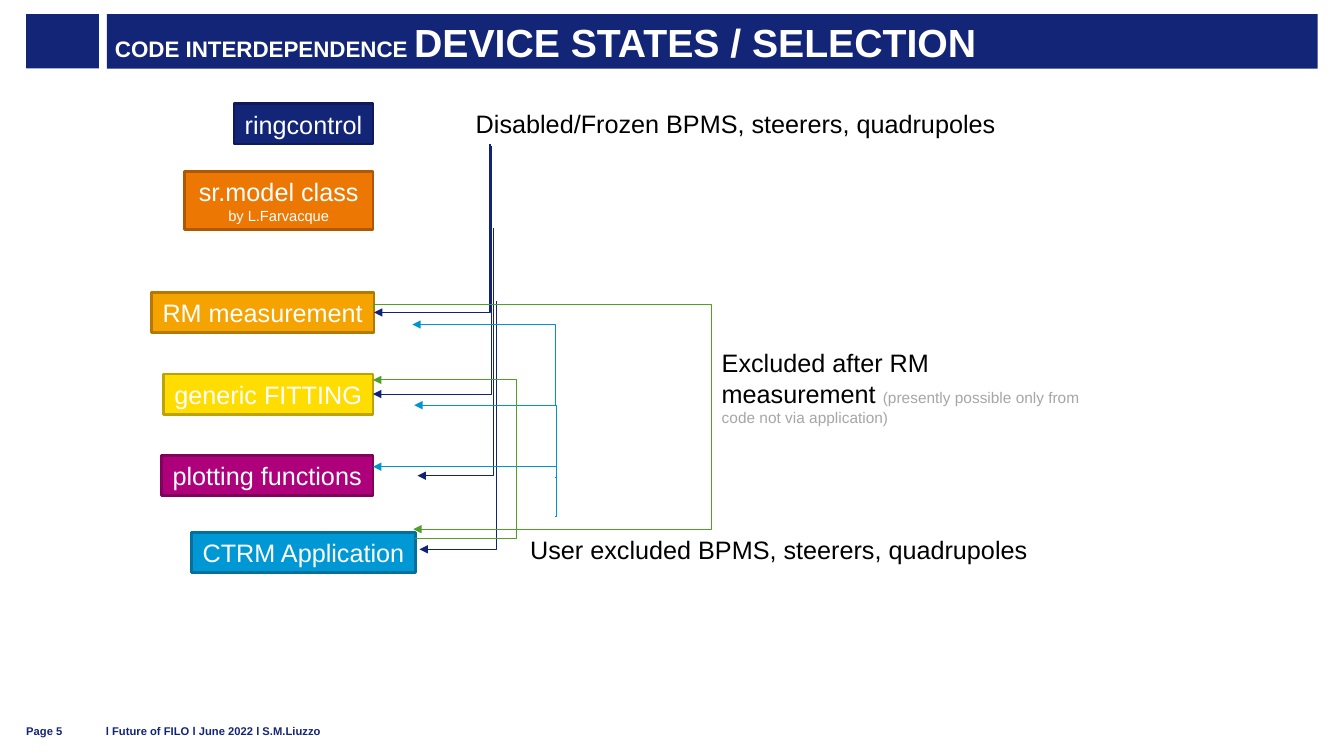
import pptx
import pptx.dml.color
import pptx.enum.shapes
import pptx.enum.text
import pptx.oxml
import pptx.oxml.ns
import pptx.util

Inches = pptx.util.Inches
NAVY, BLUE, GREEN, WHITE, BLACK = "132577", "0095CF", "51A026", "FFFFFF", "000000"
ARROW_NAVY = "102377"
MODULES = [
    ([("ringcontrol", 18)], 2.2, 0, 1.38, 0.4, NAVY, "0E1B58"),
    ([("sr.model class", 18), ("by L.Farvacque", 10.5)], 2.2, 0.67, 1.87, 0.58, "ED7703", "AF5802"),
    ([("RM measurement", 18)], 2.21, 1.87, 2.21, 0.4, "F4A300", "B57900"),
    ([("generic FITTING", 18)], 2.2, 2.68, 2.08, 0.4, "FFDD00", "BDA300"),
    ([("plotting functions", 18)], 2.2, 3.49, 2.1, 0.4, "AF007C", "81005C"),
    ([("CTRM Application", 18)], 2.62, 4.25, 2.22, 0.4, BLUE_FILL := "0098D4", "00709D"),
]
NOTES = [
    ((3.12, 0, 5.55, 0.4), [("Disabled/Frozen BPMS, steerers, quadrupoles", 18, BLACK)]),
    ((3.66, 4.22, 5.18, 0.4), [("User excluded BPMS, steerers, quadrupoles", 18, BLACK)]),
    ((5.56, 2.37, 3.85, 0.59), [
        ("Excluded after RM measurement ", 18, BLACK),
        ("(presently possible only from code not via application)", 11, "A6A6A6")]),
]
DROPS = [
    ((3.36, 0.4), (2.21, 2.07)),
    ((3.37, 0.42), (2.2, 2.88)),
    ((3.39, 1.23), (2.64, 3.69)),
    ((3.42, 1.96), (2.66, 4.42)),
]
LOOPS = [
    ((4.01, 4.09), (2.2, 3.6), 4.02, BLUE),
    ((4.01, 3.71), (2.61, 2.99), 4.02, BLUE),
    ((4.01, 2.99), (2.59, 2.19), 4.01, BLUE),
    ((2.62, 4.31), (2.2, 2.74), 3.62, GREEN),
]


def color(value):
    """Return the colour for a hex string."""
    return pptx.dml.color.RGBColor.from_string(value)


def add_span(para, text, size, tint, bold=False):
    """Add one formatted run to a paragraph."""
    span = para.add_run()
    span.text = text
    span.font.name = "Arial"
    span.font.size = pptx.util.Pt(size)
    span.font.bold = bold
    span.font.color.rgb = color(tint)


def add_rectangle(page, box, fill):
    """Add a flat filled rectangle without an outline."""
    shape = page.shapes.add_shape(pptx.enum.shapes.MSO_SHAPE.RECTANGLE, *map(Inches, box))
    shape.shadow.inherit = False
    shape.fill.solid()
    shape.fill.fore_color.rgb = color(fill)
    shape.line.fill.background()
    return shape


def add_text(page, box, spans):
    """Add a wrapping text box with one paragraph."""
    frame = page.shapes.add_textbox(*map(Inches, box)).text_frame
    frame.word_wrap = True
    for span in spans:
        add_span(frame.paragraphs[0], *span)
    return frame


def add_header(page, box):
    """Place the square and the title bar across the box."""
    left, top, width, height = box
    add_rectangle(page, (left, top, 0.72, height), NAVY)
    title = page.shapes.title
    title.left, title.top = Inches(left + 0.8), Inches(top)
    title.width, title.height = Inches(width - 0.8), Inches(height)
    title.fill.solid()
    title.fill.fore_color.rgb = color(NAVY)
    frame = title.text_frame
    frame.auto_size = pptx.enum.text.MSO_AUTO_SIZE.NONE
    frame.vertical_anchor = pptx.enum.text.MSO_ANCHOR.MIDDLE
    frame.margin_left = frame.margin_right = Inches(0.08)
    frame.margin_top = frame.margin_bottom = 0
    para = frame.paragraphs[0]
    para.alignment = pptx.enum.text.PP_ALIGN.LEFT
    add_span(para, "CODE INTERDEPENDENCE ", 16, WHITE, True)
    add_span(para, "DEVICE STATES / SELECTION", 28, WHITE, True)


def add_footer(page, box):
    """Place the page number and the talk details in the box."""
    left, top, width, height = box
    parts = [(0, 0.6, "Page 5"), (0.79, width - 0.79, "l Future of FILO l June 2022 l S.M.Liuzzo")]
    for offset, part_width, text in parts:
        frame = add_text(page, (left + offset, top, part_width, height), [(text, 8, NAVY, True)])
        frame.vertical_anchor = pptx.enum.text.MSO_ANCHOR.BOTTOM
        frame.margin_left = frame.margin_right = frame.margin_top = frame.margin_bottom = 0


def add_module(page, box, lines, fill, border):
    """Add one outlined code module with centred lines."""
    shape = add_rectangle(page, box, fill)
    shape.line.color.rgb = color(border)
    shape.line.width = pptx.util.Pt(2)
    frame = shape.text_frame
    frame.word_wrap = False
    for index, (text, size) in enumerate(lines):
        para = frame.add_paragraph() if index else frame.paragraphs[0]
        para.alignment = pptx.enum.text.PP_ALIGN.CENTER
        add_span(para, text, size, WHITE)


def add_elbow(page, begin, end, tint, preset, adjustments=(), turn=0):
    """Add a bent arrow, with its frame turned by the given degrees."""
    (x1, y1), (x2, y2) = begin, end
    if turn:
        middle_x, middle_y = (x1 + x2) / 2, (y1 + y2) / 2
        half_width, half_height = abs(y2 - y1) / 2, abs(x2 - x1) / 2
        side = 1 if turn == 90 else -1
        x1, x2 = middle_x - side * half_width, middle_x + side * half_width
        y1, y2 = middle_y - half_height, middle_y + half_height
    kind = pptx.enum.shapes.MSO_CONNECTOR.ELBOW
    arrow = page.shapes.add_connector(kind, *map(Inches, (x1, y1, x2, y2)))
    arrow.line.color.rgb = color(tint)
    arrow.line.width = pptx.util.Pt(0.75)
    qn, make = pptx.oxml.ns.qn, pptx.oxml.xmlchemy.OxmlElement
    properties = arrow.element.spPr
    if turn:
        properties.find(qn("a:xfrm")).set("rot", str(turn * 60000))
    geometry = properties.find(qn("a:prstGeom"))
    geometry.set("prst", preset)
    for number, value in enumerate(adjustments, 1):
        guide = make("a:gd")
        guide.set("name", f"adj{number}")
        guide.set("fmla", f"val {round(value * 100000)}")
        geometry.find(qn("a:avLst")).append(guide)
    tail = make("a:tailEnd")
    tail.set("type", "triangle")
    properties.find(qn("a:ln")).append(tail)
    properties.append(make("a:effectLst"))


def add_diagram(page, box):
    """Place modules, notes and arrows from the corner of the box."""
    left, top = box[:2]

    def place(point):
        """Shift a point by the corner of the box."""
        return left + point[0], top + point[1]

    for lines, right, offset, width, height, fill, border in MODULES:
        add_module(page, (*place((right - width, offset)), width, height), lines, fill, border)
    for note, spans in NOTES:
        add_text(page, (*place(note), *note[2:]), spans)
    for begin, end in DROPS:
        add_elbow(page, place(begin), place(end), ARROW_NAVY, "bentConnector2", turn=90)
    for begin, end, bend, tint in LOOPS:
        ratio = (begin[0] - bend) / (begin[0] - end[0])
        add_elbow(page, place(begin), place(end), tint, "bentConnector3", [ratio])
    begin, end, rise, bend = (2.2, 2.03), (2.6, 4.22), 0.04, 5.56
    ratios = [-rise / (end[1] - begin[1]), (bend - begin[0]) / (end[0] - begin[0])]
    add_elbow(page, place(begin), place(end), GREEN, "bentConnector4", ratios, 270)


def main():
    """Build the slide and save it."""
    deck = pptx.Presentation()
    deck.slide_width, deck.slide_height = Inches(13.33), Inches(7.5)
    page = deck.slides.add_slide(deck.slide_layouts[5])
    add_header(page, (0.26, 0.14, 12.81, 0.54))
    add_diagram(page, (1.5, 1.03, 9.41, 4.65))
    add_footer(page, (0.26, 7.09, 9.71, 0.23))
    deck.save("out.pptx")


if __name__ == "__main__":
    main()
